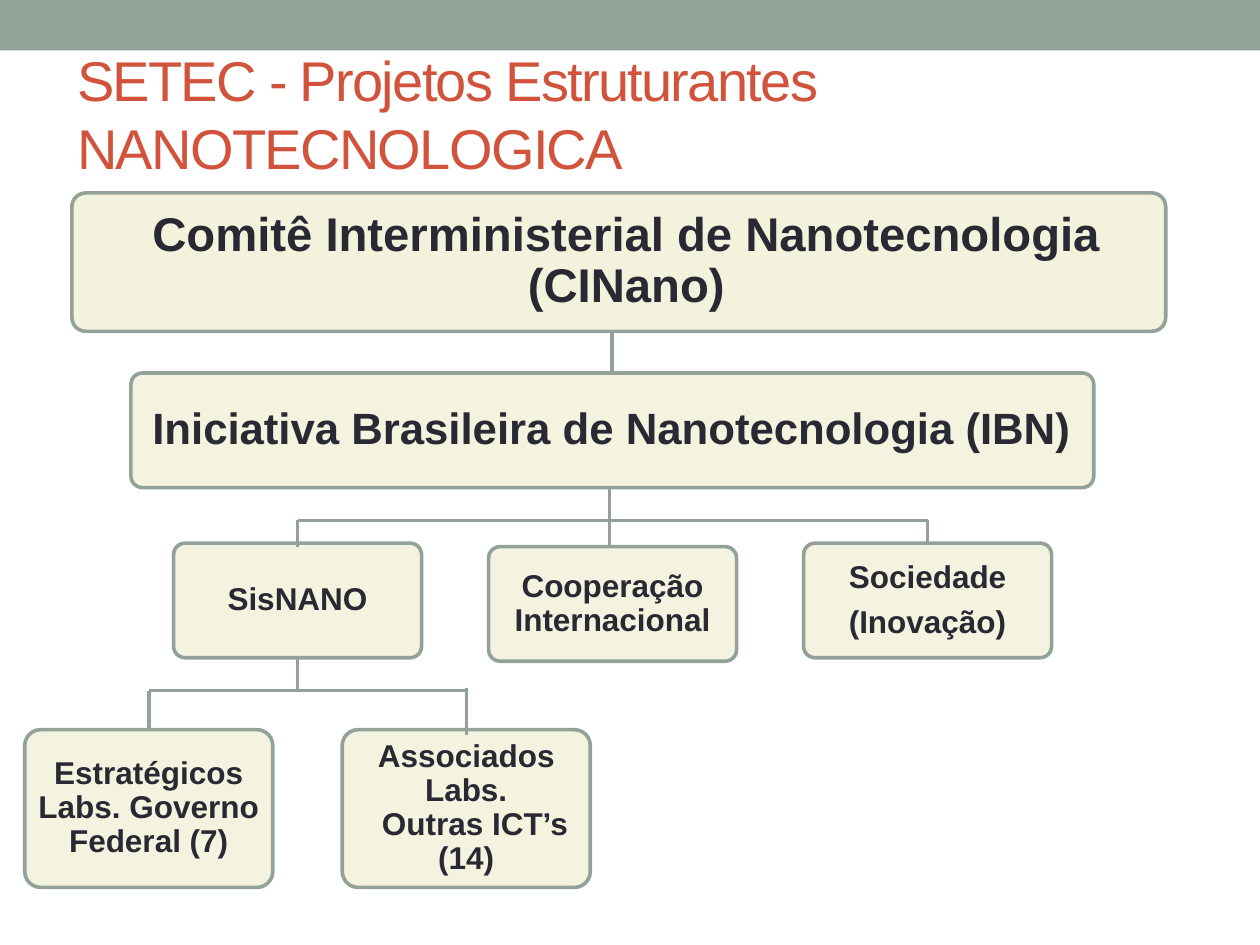
"""Build the nanotechnology organisation chart slide."""
from lxml import etree
from pptx import Presentation
from pptx import util as u
from pptx.dml.color import RGBColor
from pptx.enum import shapes, text
from pptx.oxml import ns

SAGE = RGBColor(0x93, 0xA2, 0x99)
CREAM = RGBColor(0xF3, 0xF2, 0xDC)
INK = RGBColor(0x29, 0x29, 0x34)
RUST = RGBColor(0xD2, 0x53, 0x3C)


class Chart:
    """Holds the style and the current slide."""

    font = "Arial"

    def __init__(self, slide):
        self.slide = slide

    def style(self, para, size, color, bold=False):
        for run in para.runs:
            run.font.name = self.font
            run.font.size = u.Pt(size)
            run.font.bold = bold
            run.font.color.rgb = color

    def title(self, words, x, y, w, h):
        shape = self.slide.shapes.title
        shape.left, shape.top, shape.width, shape.height = map(u.Cm, (x, y, w, h))
        frame = shape.text_frame
        frame.text = words
        frame.vertical_anchor = text.MSO_ANCHOR.MIDDLE
        para = frame.paragraphs[0]
        para.alignment = text.PP_ALIGN.LEFT
        self.style(para, 32, RUST)
        for run in para.runs:
            run.font._element.set("spc", "-100")

    def bar(self, w, h):
        shape = self.slide.shapes.add_shape(
            shapes.MSO_SHAPE.RECTANGLE, 0, 0, u.Cm(w), u.Cm(h))
        shape.shadow.inherit = False
        shape.fill.solid()
        shape.fill.fore_color.rgb = SAGE
        shape.line.fill.background()

    def box(self, words, x, y, w, h, size=18, pads=(0.18, 0.18), gap=0.35, alpha=90):
        shape = self.slide.shapes.add_shape(
            shapes.MSO_SHAPE.ROUNDED_RECTANGLE, *map(u.Cm, (x, y, w, h)))
        shape.adjustments[0] = 0.1
        shape.shadow.inherit = False
        shape.fill.solid()
        shape.fill.fore_color.rgb = CREAM
        tint = shape.fill._xPr.find(".//" + ns.qn("a:srgbClr"))
        etree.SubElement(tint, ns.qn("a:alpha"), val=str(alpha * 1000))
        shape.line.color.rgb = SAGE
        shape.line.width = u.Pt(2.08)
        frame = shape.text_frame
        frame.text = words
        frame.word_wrap = True
        frame.vertical_anchor = text.MSO_ANCHOR.MIDDLE
        frame.margin_left, frame.margin_right = map(u.Cm, pads)
        frame.margin_top = frame.margin_bottom = u.Cm(0.18)
        for para in frame.paragraphs:
            para.alignment = text.PP_ALIGN.CENTER
            para.line_spacing = 0.9
            para.space_after = u.Pt(size * gap)
            self.style(para, size, INK, True)
        return frame

    def link(self, x1, y1, x2, y2):
        line = self.slide.shapes.add_connector(
            shapes.MSO_CONNECTOR.STRAIGHT, *map(u.Cm, (x1, y1, x2, y2)))
        line.line.color.rgb = SAGE
        line.line.width = u.Pt(2)
        etree.SubElement(line._element.spPr, ns.qn("a:effectLst"))


def main():
    deck = Presentation()
    deck.slide_width, deck.slide_height = u.Cm(25.4), u.Cm(19.05)
    chart = Chart(deck.slides.add_slide(deck.slide_layouts[5]))
    chart.bar(25.4, 1.02)
    chart.title("SETEC - Projetos Estruturantes\vNANOTECNOLOGICA", 1.3, 0.91, 22.86, 2.74)

    chart.box("Comitê Interministerial de Nanotecnologia (CINano)",
              1.45, 3.89, 22.05, 2.79, 27, (0.3, 0), alpha=100)
    chart.box("Iniciativa Brasileira de Nanotecnologia (IBN)",
              2.64, 7.52, 19.41, 2.31, 25, (0.13, 0.18))
    areas = (("SisNANO", 10.95), ("Cooperação Internacional", 11.02),
             ("Sociedade\n(Inovação)", 10.95))
    for i, (words, y) in enumerate(areas):
        chart.box(words, 3.5 + 6.35 * i, y, 5, 2.31)
    chart.box("Estratégicos Labs. Governo Federal (7)", 0.5, 14.71, 5, 3.18)
    labs = chart.box("Associados\nLabs.\nOutras ICT’s\n(14)", 6.9, 14.71, 5, 3.18, gap=0)
    labs.paragraphs[2]._p.get_or_add_pPr().set("marL", str(u.Cm(0.35)))

    for x, y1, y2 in ((12.34, 6.7, 7.52), (12.29, 9.85, 11.05), (6, 10.49, 11.02),
                      (18.7, 10.49, 10.95), (6, 13.26, 13.92),
                      (3, 13.92, 14.71), (9.4, 13.87, 14.81)):
        chart.link(x, y1, x, y2)
    for x1, x2, y in ((6, 18.7, 10.49), (3, 9.4, 13.92)):
        chart.link(x1, y, x2, y)
    deck.save("out.pptx")


if __name__ == "__main__":
    main()
